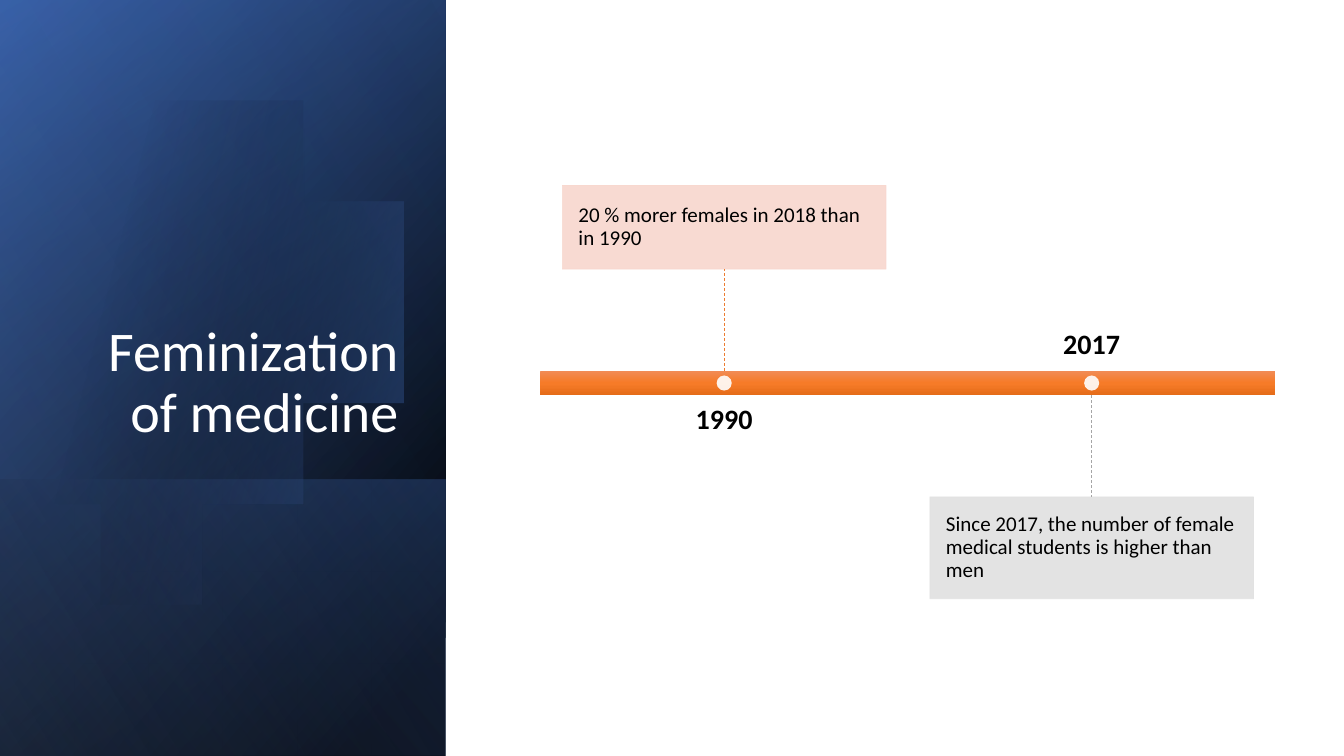
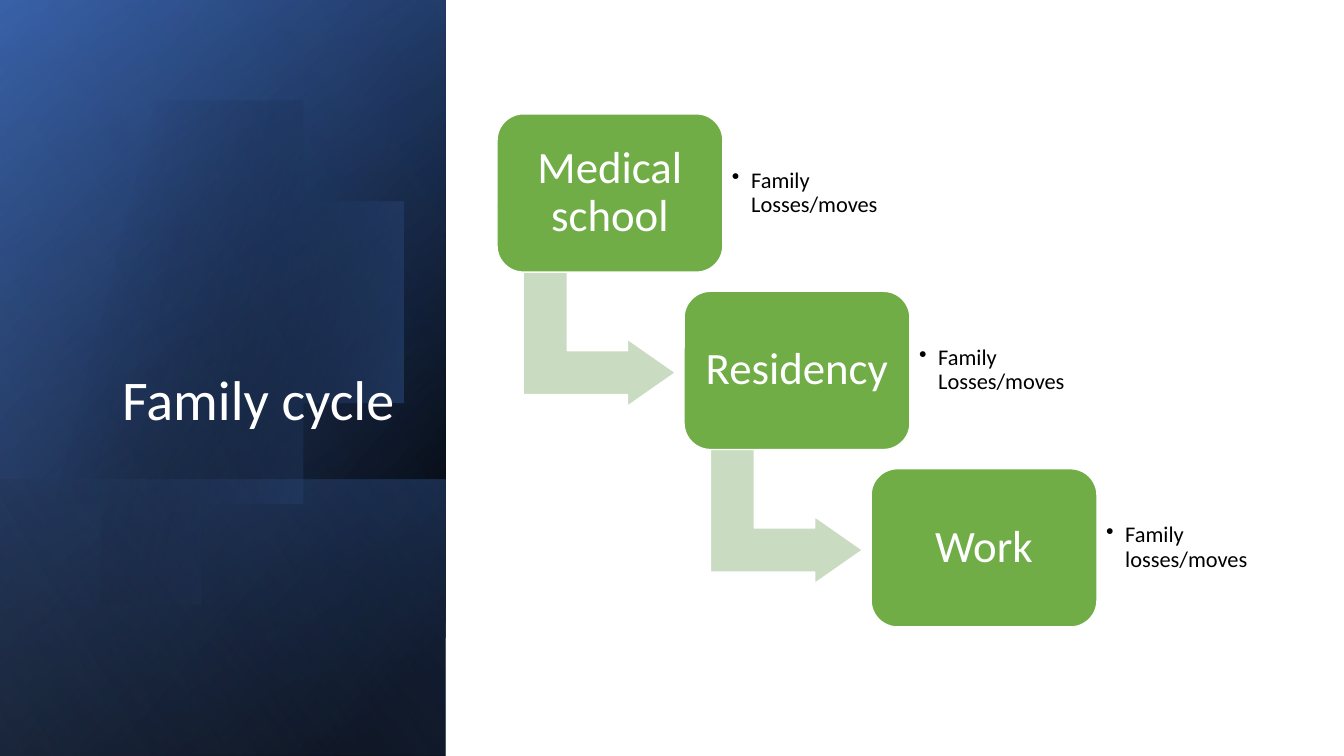
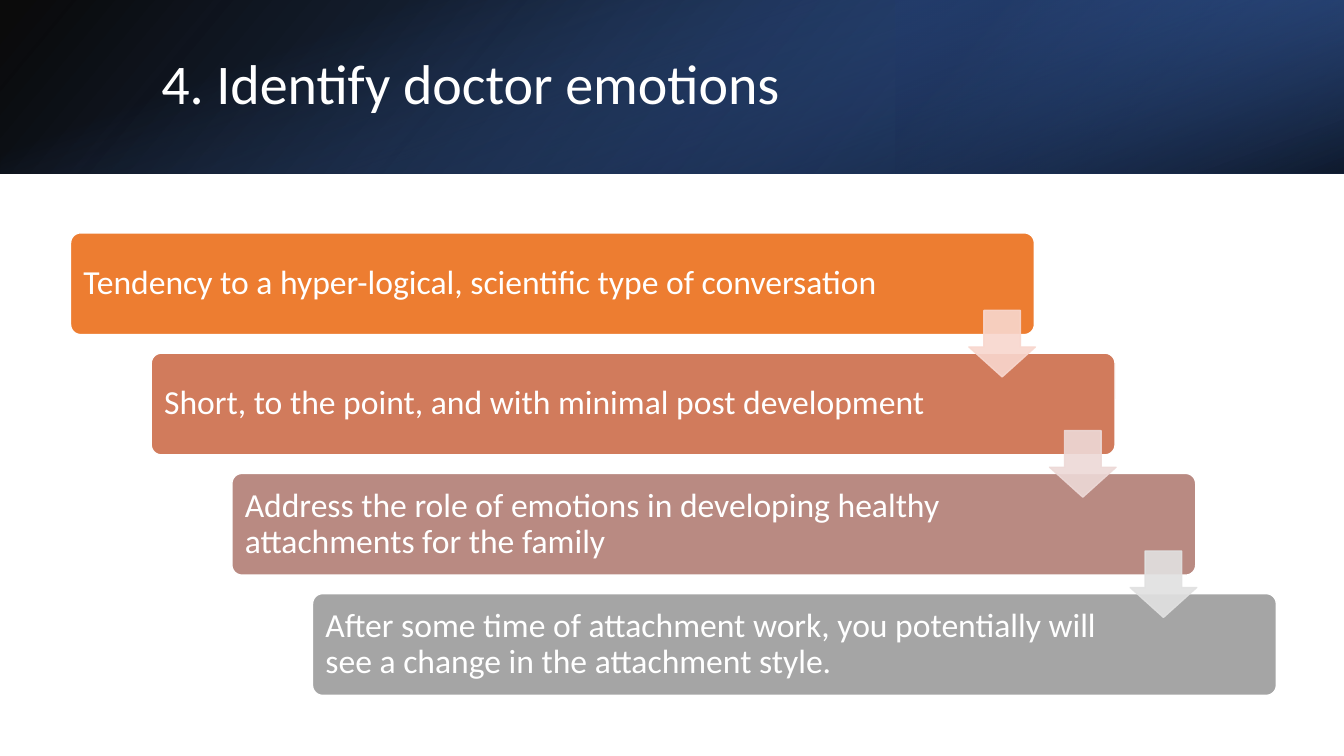
from math import acos, cos, pi, sin

from lxml.etree import SubElement
from pptx import Presentation
from pptx.dml.color import RGBColor
from pptx.enum.dml import MSO_LINE
from pptx.enum.shapes import MSO_CONNECTOR, MSO_SHAPE
from pptx.enum.text import MSO_ANCHOR, MSO_AUTO_SIZE, PP_ALIGN
from pptx.oxml import parse_xml
from pptx.oxml.ns import nsdecls, qn
from pptx.util import Inches, Pt

W, H = 13.33, 7.5
PANEL_W, BAND_H = 4.42, 1.72


class Theme:
    font = "Calibri"
    black, white = "000000", "FFFFFF"
    blue, deep, navy, pale = "4472C4", "2F5597", "203864", "8FAADC"
    orange, grey, green = "ED7D31", "A5A5A5", "70AD47"
    peach, silver, rose, sage = "F8D7CE", "E1E1E1", "EDD9D7", "C9DBC1"
    bar = [(0, "F18C57", 100), (50, "F67B28", 100), (100, "E56C19", 100)]
    title, stage, step, year, bullet, note = 40, 32, 24, 20, 16, 15
    veil = 90


T = Theme

# Gradient layers: visible box, rotation, flipped, stops (position, colour, opacity), angle
PANEL_BOX = (0, 0, PANEL_W, H)
PANEL_BELOW = [
    (PANEL_BOX, 90, True, [(8, T.black, 100), (100, T.deep, 100)], 50),
    (PANEL_BOX, 90, True, [(0, T.black, 0), (99, T.blue, 46)], 30),
    ((0, 4.76, PANEL_W, 2.74), 90, True, [(2, T.blue, 29), (100, T.black, 30)], 130),
]
PANEL_ABOVE = [(PANEL_BOX, 90, True, [(0, T.black, 0), (99, T.pale, 11)], 120)]
DISC = (1.44, 3.38, 2.29)
DISC_STOPS = [(29, T.black, 0), (100, T.blue, 43)]
BAND = [
    ((0, 0, W, BAND_H), 0, True, [(0, T.black, 96), (100, T.deep, 100)], 140),
    ((W * 2 / 3, 0, W / 3, BAND_H), 180, True, [(19, T.navy, 68), (100, T.blue, 79)], 320),
    ((0, 0, W, BAND_H), 90, False, [(23, T.blue, 0), (99, T.black, 74)], 340),
]

# Year, note, note height, note colour, stem colour, note above the bar
EVENTS = [
    ("1990", "20 % morer females in 2018 than in 1990", 0.83, T.peach, T.orange, True),
    ("2017", "Since 2017, the number of female medical students is higher than men",
     1.01, T.silver, T.grey, False),
]
STAGES = [
    ("Medical school", "Family Losses/moves"),
    ("Residency", "Family Losses/moves"),
    ("Work", "Family losses/moves"),
]
# Text, bar colour, colour of the arrow to the next bar
STEPS = [
    ("Tendency to a hyper-logical, scientific type of conversation", T.orange, T.peach),
    ("Short, to the point, and with minimal post development", "D17B5C", T.rose),
    ("Address the role of emotions in developing healthy attachments for the family",
     "B98A82", T.silver),
    ("After some time of attachment work, you potentially will see a change in the "
     "attachment style.", T.grey, None),
]


def rgb(color):
    return RGBColor.from_string(color)


def inches(box):
    return [Inches(v) for v in box]


def paint_gradient(sp, stops, angle):
    sp.shadow.inherit = False
    sp.line.fill.background()
    sp.fill.background()
    gs = "".join(
        f'<a:gs pos="{pos * 1000}"><a:srgbClr val="{color}">'
        f'<a:alpha val="{opacity * 1000}"/></a:srgbClr></a:gs>'
        for pos, color, opacity in stops)
    grad = parse_xml(
        f'<a:gradFill {nsdecls("a")} rotWithShape="1"><a:gsLst>{gs}</a:gsLst>'
        f'<a:lin ang="{angle * 60000}" scaled="0"/></a:gradFill>')
    spPr = sp._element.spPr
    spPr.replace(spPr.find(qn("a:noFill")), grad)


def add_layers(s, layers):
    """Add gradient rectangles, each given by the box it covers once turned."""
    for (x, y, w, h), rot, flipped, stops, angle in layers:
        fw, fh = (h, w) if rot == 90 else (w, h)
        frame = (x + (w - fw) / 2, y + (h - fh) / 2, fw, fh)
        sp = s.shapes.add_shape(MSO_SHAPE.RECTANGLE, *inches(frame))
        sp.rotation = rot
        if flipped:
            sp._element.spPr.xfrm.set("flipH", "1")
        paint_gradient(sp, stops, angle)


def add_disc(s):
    """Add the circle that the left edge of the slide cuts off."""
    cx, cy, r = DISC
    end = acos(-cx / r)
    n = 120
    angles = [end * (2 * i / n - 1) for i in range(n + 1)]
    points = [(cx + r * cos(a), cy + r * sin(a)) for a in angles]
    builder = s.shapes.build_freeform(*points[0], scale=Inches(1))
    builder.add_line_segments(points[1:], close=True)
    paint_gradient(builder.convert_to_shape(), DISC_STOPS, 14)


def add_side_panel(s):
    add_layers(s, PANEL_BELOW)
    add_disc(s)
    add_layers(s, PANEL_ABOVE)


def add_band(s):
    add_layers(s, BAND)


def set_text(sp, text, size, color, align=PP_ALIGN.LEFT, anchor=MSO_ANCHOR.MIDDLE,
             margins=(0, 0, 0, 0), bold=False):
    tf = sp.text_frame
    tf.text = text
    tf.word_wrap = True
    tf.auto_size = MSO_AUTO_SIZE.NONE
    tf.vertical_anchor = anchor
    tf.margin_left, tf.margin_top, tf.margin_right, tf.margin_bottom = inches(margins)
    p = tf.paragraphs[0]
    p.alignment = align
    p.line_spacing = 0.9
    font = p.runs[0].font
    font.name, font.size, font.bold = T.font, Pt(size), bold
    font.color.rgb = rgb(color)
    return p


def add_figure(s, kind, box, fill, line=None, line_w=1, adj=(), opacity=100):
    sp = s.shapes.add_shape(kind, *inches(box))
    sp.shadow.inherit = False
    for i, value in enumerate(adj):
        sp.adjustments[i] = value
    sp.fill.solid()
    sp.fill.fore_color.rgb = rgb(fill)
    if line:
        sp.line.color.rgb = rgb(line)
        sp.line.width = Pt(line_w)
    else:
        sp.line.fill.background()
    if opacity < 100:
        for clr in sp._element.spPr.iter(qn("a:srgbClr")):
            SubElement(clr, qn("a:alpha")).set("val", str(opacity * 1000))
    return sp


def add_stem(s, x, y1, y2, color):
    ln = s.shapes.add_connector(MSO_CONNECTOR.STRAIGHT, *inches((x, y1, x, y2)))
    ln.line.color.rgb = rgb(color)
    ln.line.width = Pt(0.5)
    ln.line.dash_style = MSO_LINE.DASH
    SubElement(ln._element.spPr, qn("a:effectLst"))


def add_slide(prs, title, box, backdrop, align, anchor):
    s = prs.slides.add_slide(prs.slide_layouts[5])
    backdrop(s)
    sp = s.shapes.title
    sp.left, sp.top, sp.width, sp.height = inches(box)
    set_text(sp, title, T.title, T.white, align, anchor, (0.1, 0.05, 0.1, 0.05))
    s.shapes._spTree.append(sp._element)  # bring the title in front of the backdrop
    return s


def draw_timeline(s):
    x, y, w, h = 5.36, 3.68, 7.29, 0.24
    note_w, label_w, label_h, stem, gap, dot = 3.21, 2.92, 0.67, 1.01, 0.1, 0.15
    bar = s.shapes.add_shape(MSO_SHAPE.RECTANGLE, *inches((x, y, w, h)))
    paint_gradient(bar, T.bar, 90)
    for i, (year, note, note_h, color, stem_color, above) in enumerate(EVENTS):
        cx = x + w * (2 * i + 1) / (2 * len(EVENTS))
        if above:
            edge, tip, label_y, anchor = y, y - stem, y + h + gap, MSO_ANCHOR.TOP
            note_y = tip - note_h
        else:
            edge, tip, label_y, anchor = y + h, y + h + stem, y - gap - label_h, MSO_ANCHOR.BOTTOM
            note_y = tip
        label = s.shapes.add_textbox(*inches((cx - label_w / 2, label_y, label_w, label_h)))
        set_text(label, year, T.year, T.black, PP_ALIGN.CENTER, anchor, bold=True)
        sp = add_figure(s, MSO_SHAPE.RECTANGLE, (cx - note_w / 2, note_y, note_w, note_h),
                        color, color, 0.5, opacity=T.veil)
        set_text(sp, note, T.note, T.black, margins=(0.16,) * 4)
        add_stem(s, cx, edge, tip, stem_color)
        add_figure(s, MSO_SHAPE.OVAL, (cx - dot / 2, y + (h - dot) / 2, dot, dot),
                   T.white, opacity=T.veil)


def draw_stages(s):
    w, h = 2.24, 1.57
    for i, (stage, event) in enumerate(STAGES):
        x, y = 4.93 + 1.855 * i, 1.13 + 1.76 * i
        if i < len(STAGES) - 1:
            arrow = add_figure(s, MSO_SHAPE.BENT_UP_ARROW, (x + 0.35, y + 1.48, 1.33, 1.51),
                               T.sage, T.white, adj=(0.328, 0.25, 0.358))
            arrow.rotation = 90
        sp = add_figure(s, MSO_SHAPE.ROUNDED_RECTANGLE, (x, y, w, h), T.green, T.white,
                        adj=(0.167,))
        set_text(sp, stage, T.stage, T.white, PP_ALIGN.CENTER, margins=(0.13,) * 4)
        tb = s.shapes.add_textbox(*inches((x + w, y + 0.15, 1.63, 1.27)))
        p = set_text(tb, event, T.bullet, T.black, margins=(0.09,) * 4)
        pPr = p._p.get_or_add_pPr()
        pPr.set("marL", str(Inches(0.19)))
        pPr.set("indent", str(-Inches(0.19)))
        SubElement(pPr, qn("a:buChar")).set("char", "•")


def draw_steps(s):
    w, h, side = 9.56, 1.01, 0.66
    places = [(0.7 + 0.8 * i, 2.31 + 1.193 * i) for i in range(len(STEPS))]
    for (x, y), (text, color, _) in zip(places, STEPS):
        sp = add_figure(s, MSO_SHAPE.ROUNDED_RECTANGLE, (x, y, w, h), color, T.white,
                        adj=(0.1,))
        set_text(sp, text, T.step, T.white, margins=(0.1, 0.1, 1.45, 0.1))
    for (x, y), (_, _, color) in zip(places, STEPS):
        if color:
            add_figure(s, MSO_SHAPE.DOWN_ARROW, (x + 8.91, y + 0.77, side, side),
                       color, color, adj=(0.55, 0.45), opacity=T.veil)


def main():
    prs = Presentation()
    prs.slide_width, prs.slide_height = Inches(W), Inches(H)
    side = (add_side_panel, PP_ALIGN.RIGHT, MSO_ANCHOR.BOTTOM)
    top = (add_band, PP_ALIGN.LEFT, MSO_ANCHOR.MIDDLE)
    slides = [
        ("Feminization of medicine", (0.64, 1.84, 3.41, 2.62), side, draw_timeline),
        ("Family cycle", (0.51, 0.64, 3.5, 3.7), side, draw_stages),
        ("4. Identify doctor emotions", (1.5, 0.38, 10.98, 0.96), top, draw_steps),
    ]
    for title, box, style, draw in slides:
        draw(add_slide(prs, title, box, *style))
    prs.save("out.pptx")


if __name__ == "__main__":
    main()
